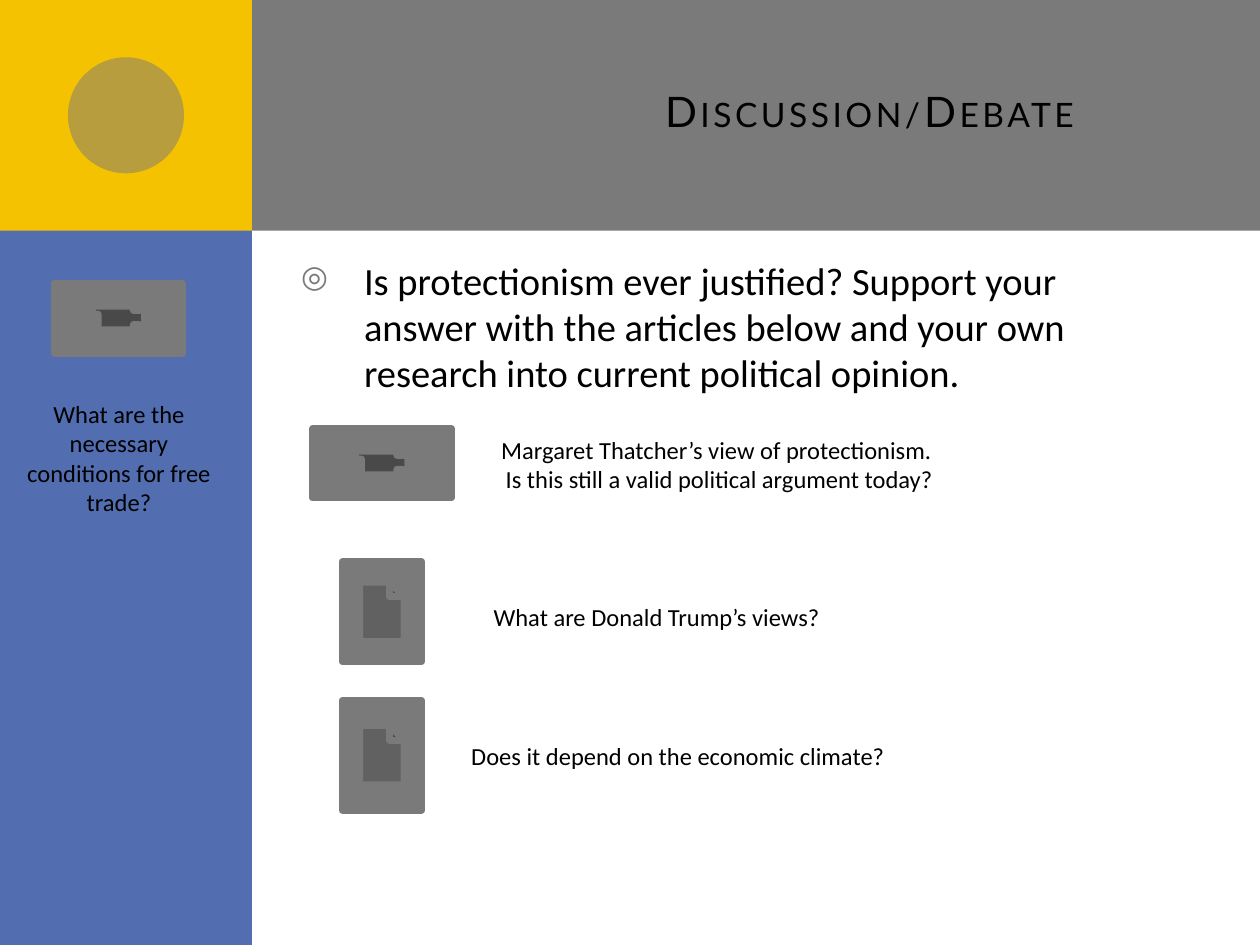
from dataclasses import dataclass

from lxml import etree
from pptx import Presentation
from pptx.dml.color import RGBColor
from pptx.enum.shapes import MSO_SHAPE
from pptx.enum.text import MSO_ANCHOR, MSO_AUTO_SIZE, PP_ALIGN
from pptx.oxml.ns import qn
from pptx.util import Cm, Pt

RECT, OVAL = MSO_SHAPE.RECTANGLE, MSO_SHAPE.OVAL
MOVIE, DOCUMENT = MSO_SHAPE.ACTION_BUTTON_MOVIE, MSO_SHAPE.ACTION_BUTTON_DOCUMENT
LEFT, CENTER, RIGHT = PP_ALIGN.LEFT, PP_ALIGN.CENTER, PP_ALIGN.RIGHT
TOP, MIDDLE = MSO_ANCHOR.TOP, MSO_ANCHOR.MIDDLE
FIT_SHAPE = MSO_AUTO_SIZE.SHAPE_TO_FIT_TEXT

SLIDE_W, SLIDE_H = 25.4, 19.05
SIDEBAR_W, HEADER_H = 5.08, 4.65


@dataclass(frozen=True)
class Theme:
    gray: str = "7A7A7A"
    blue: str = "526DB0"
    yellow: str = "F5C201"
    text: str = "000000"
    title_font: str = "Lato"
    body_font: str = "Calibri"
    title_size: int = 24
    body_size: int = 22
    caption_size: int = 14
    button_line: int = 4


class SlideBuilder:
    def __init__(self, slide, theme):
        self.s = slide
        self.theme = theme

    def shape(self, kind, x, y, w, h, color, alpha=None, line=None):
        sp = self.s.shapes.add_shape(kind, Cm(x), Cm(y), Cm(w), Cm(h))
        sp.shadow.inherit = False
        sp.fill.solid()
        sp.fill.fore_color.rgb = RGBColor.from_string(color)
        if alpha is not None:
            clr = sp.fill._xPr.find(qn("a:solidFill"))[0]
            etree.SubElement(clr, qn("a:alpha"), val=str(alpha * 1000))
        if line:
            sp.line.color.rgb = RGBColor.from_string(color)
            sp.line.width = Pt(line)
        else:
            sp.line.fill.background()
        return sp

    def button(self, kind, center_x, y, w, h):
        return self.shape(kind, center_x - w / 2, y, w, h,
                          self.theme.gray, line=self.theme.button_line)

    def text(self, lines, x, y, w, h, size, font=None, align=LEFT, **frame):
        tf = self.s.shapes.add_textbox(Cm(x), Cm(y), Cm(w), Cm(h)).text_frame
        for name, value in {"word_wrap": True, **frame}.items():
            setattr(tf, name, value)
        for i, line in enumerate(lines):
            p = tf.paragraphs[0] if i == 0 else tf.add_paragraph()
            p.alignment = align
            r = p.add_run()
            r.text = line
            style = {"name": font or self.theme.body_font, "size": Pt(size)}
            for name, value in style.items():
                setattr(r.font, name, value)
            r.font.color.rgb = RGBColor.from_string(self.theme.text)
        return tf

    def title(self, text, *box):
        tf = self.text([text], *box, self.theme.title_size, self.theme.title_font,
                       RIGHT, vertical_anchor=MIDDLE, margin_right=Cm(1.27))
        rPr = tf.paragraphs[0].runs[0].font._element
        rPr.set("cap", "small")
        rPr.set("spc", "200")

    def bullet(self, text, *box):
        tf = self.text([text], *box, self.theme.body_size, vertical_anchor=TOP)
        p = tf.paragraphs[0]
        p.space_before = Pt(18)
        pPr = p._p.get_or_add_pPr()
        pPr.set("marL", str(Cm(1.27)))
        pPr.set("indent", str(-Cm(1.27)))
        clr = etree.SubElement(pPr, qn("a:buClr"))
        etree.SubElement(clr, qn("a:srgbClr"), val=self.theme.gray)
        etree.SubElement(pPr, qn("a:buSzPct"), val="80000")
        etree.SubElement(pPr, qn("a:buChar"), char="◎")

    def caption(self, lines, *box, align=LEFT):
        self.text(lines, *box, self.theme.caption_size, align=align, auto_size=FIT_SHAPE)


def main():
    prs = Presentation()
    prs.slide_width, prs.slide_height = Cm(SLIDE_W), Cm(SLIDE_H)
    theme = Theme()
    b = SlideBuilder(prs.slides.add_slide(prs.slide_layouts[6]), theme)

    # Header band, sidebar and corner badge
    b.shape(RECT, 1.27, 0, SLIDE_W - 1.27, HEADER_H, theme.gray)
    b.shape(RECT, 0, 0, SIDEBAR_W, SLIDE_H, theme.blue)
    b.shape(RECT, 0, 0, SIDEBAR_W, HEADER_H, theme.yellow)
    badge = 2.34
    b.shape(OVAL, (SIDEBAR_W - badge) / 2, (HEADER_H - badge) / 2,
            badge, badge, theme.gray, alpha=50)

    # Title and main question
    b.title("Discussion/Debate", 6.78, 0.64, 17.35, 3.18)
    b.bullet("Is protectionism ever justified? Support your answer with the articles "
             "below and your own research into current political opinion.",
             5.82, 5.05, 17.35, 10.67)

    # Resource buttons with their captions: button centre, button box, caption box
    resources = [
        (MOVIE, (7.7, 8.64, 2.79, 1.4), (9.7, 8.64, 9.6, 1.45), CENTER,
         ["Margaret Thatcher’s view of protectionism. ",
          "Is this still a valid political argument today?"]),
        (DOCUMENT, (7.7, 11.33, 1.6, 2.01), (9.7, 12.01, 8.61, 0.86), LEFT,
         ["What are Donald Trump’s views?"]),
        (DOCUMENT, (7.7, 14.12, 1.6, 2.21), (9.25, 14.81, 11.13, 0.86), LEFT,
         ["Does it depend on the economic climate?"]),
        (MOVIE, (2.39, 5.72, 2.59, 1.4), (0.1, 7.92, 4.6, 2.64), CENTER,
         ["What are the necessary conditions for free trade?"]),
    ]
    for kind, button_box, caption_box, align, lines in resources:
        b.button(kind, *button_box)
        b.caption(lines, *caption_box, align=align)

    prs.save("out.pptx")


if __name__ == "__main__":
    main()
